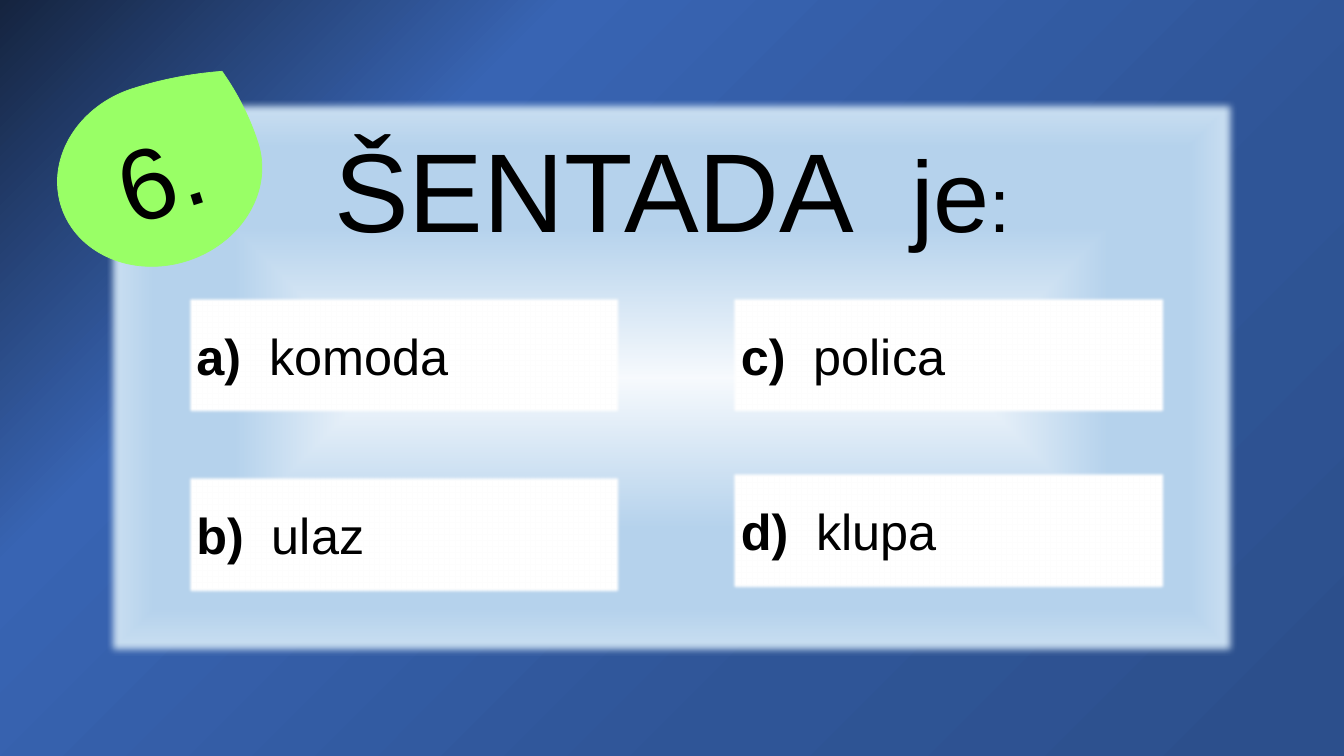
from dataclasses import dataclass

from lxml.etree import SubElement
from pptx import Presentation
from pptx.dml.color import RGBColor
from pptx.enum.shapes import MSO_SHAPE
from pptx.enum.text import MSO_ANCHOR, MSO_AUTO_SIZE, PP_ALIGN
from pptx.oxml.ns import qn
from pptx.util import Cm, Pt

BLACK = RGBColor(0x00, 0x00, 0x00)
WHITE = RGBColor(0xFF, 0xFF, 0xFF)
LIME = RGBColor(0x99, 0xFF, 0x66)
NIGHT = RGBColor(0x15, 0x24, 0x3F)
ROYAL = RGBColor(0x38, 0x64, 0xB3)
DENIM = RGBColor(0x2F, 0x55, 0x97)
NAVY = RGBColor(0x2C, 0x4F, 0x8C)
FROST = RGBColor(0xF7, 0xFA, 0xFD)
SKY = RGBColor(0xB5, 0xD2, 0xEC)
MIST = RGBColor(0xCE, 0xE1, 0xF2)

BACKDROP = [(0, NIGHT), (27, ROYAL), (69, DENIM), (97, NAVY)]
GLOW = [(0, FROST), (54, SKY), (83, SKY), (100, MIST)]


@dataclass
class Run:
    text: str
    size: int
    bold: bool = False


@dataclass
class Answer:
    letter: str
    word: str
    left: float
    top: float


LEFT_COLUMN, RIGHT_COLUMN = 4.7, 18.42
ANSWER_WIDTH, ANSWER_HEIGHT = 10.97, 3.02
ANSWERS = [
    Answer("a", "komoda", LEFT_COLUMN, 7.44),
    Answer("c", "polica", RIGHT_COLUMN, 7.44),
    Answer("b", "ulaz", LEFT_COLUMN, 11.96),
    Answer("d", "klupa", RIGHT_COLUMN, 11.86),
]


def set_all(target, values: dict) -> None:
    for name, value in values.items():
        setattr(target, name, value)


def set_stops(element, stops: list[tuple[int, RGBColor]]):
    grad = next(element.iter(qn("a:gradFill")))
    for child in list(grad):
        grad.remove(child)
    stop_list = SubElement(grad, qn("a:gsLst"))
    for percent, color in stops:
        stop = SubElement(stop_list, qn("a:gs"), pos=str(percent * 1000))
        SubElement(stop, qn("a:srgbClr"), val=str(color))
    return grad


def soften_edge(shape, radius: Pt) -> None:
    effects = shape.element.spPr.find(qn("a:effectLst"))
    SubElement(effects, qn("a:softEdge"), rad=str(int(radius)))


def write(shape, runs: list[Run], align: PP_ALIGN, anchor: MSO_ANCHOR) -> None:
    tf = shape.text_frame
    set_all(tf, {"word_wrap": True, "auto_size": MSO_AUTO_SIZE.NONE,
                 "vertical_anchor": anchor})
    p = tf.paragraphs[0]
    p.alignment = align
    for run in runs:
        r = p.add_run()
        r.text = run.text
        set_all(r.font, {"name": "Arial", "size": Pt(run.size), "bold": run.bold})
        r.font.color.rgb = BLACK


def add_filled(s, kind: MSO_SHAPE, box: tuple[float, ...], color: RGBColor):
    sp = s.shapes.add_shape(kind, *map(Cm, box))
    sp.shadow.inherit = False
    sp.fill.solid()
    sp.fill.fore_color.rgb = color
    sp.line.fill.background()
    return sp


def paint_background(s) -> None:
    s.background.fill.gradient()
    grad = set_stops(s.element, BACKDROP)
    SubElement(grad, qn("a:lin"), ang=str(45 * 60000), scaled="0")


def add_question(s) -> None:
    sp = s.shapes.title
    set_all(sp, {"left": Cm(2.72), "top": Cm(2.54),
                 "width": Cm(28.45), "height": Cm(13.97)})
    sp.fill.gradient()
    grad = set_stops(sp.element, GLOW)
    center = SubElement(grad, qn("a:path"), path="shape")
    SubElement(center, qn("a:fillToRect"), l="50000", t="50000", r="50000", b="50000")
    sp.shadow.inherit = False
    soften_edge(sp, Pt(5))
    sp.text_frame.margin_top = Cm(0.5)
    write(sp, [Run("ŠENTADA  ", 80), Run("je", 72), Run(":", 54)],
          PP_ALIGN.CENTER, MSO_ANCHOR.TOP)


def add_answer(s, answer: Answer) -> None:
    box = (answer.left, answer.top, ANSWER_WIDTH, ANSWER_HEIGHT)
    sp = add_filled(s, MSO_SHAPE.RECTANGLE, box, WHITE)
    soften_edge(sp, Pt(2.5))
    write(sp, [Run(f"{answer.letter})  ", 36, True), Run(answer.word, 36)],
          PP_ALIGN.LEFT, MSO_ANCHOR.MIDDLE)


def add_number(s) -> None:
    sp = add_filled(s, MSO_SHAPE.TEAR, (1.42, 2.13, 5.21, 4.55), LIME)
    sp.adjustments[0] = 0.88
    sp.rotation = 342.2
    sp.line.color.rgb = LIME
    sp.line.width = Pt(0.5)
    write(sp, [Run("6.", 72)], PP_ALIGN.CENTER, MSO_ANCHOR.MIDDLE)


def main() -> None:
    prs = Presentation()
    set_all(prs, {"slide_width": Cm(33.87), "slide_height": Cm(19.05)})
    s = prs.slides.add_slide(prs.slide_layouts[5])
    paint_background(s)
    add_question(s)
    for answer in ANSWERS:
        add_answer(s, answer)
    add_number(s)
    prs.save("out.pptx")


if __name__ == "__main__":
    main()
